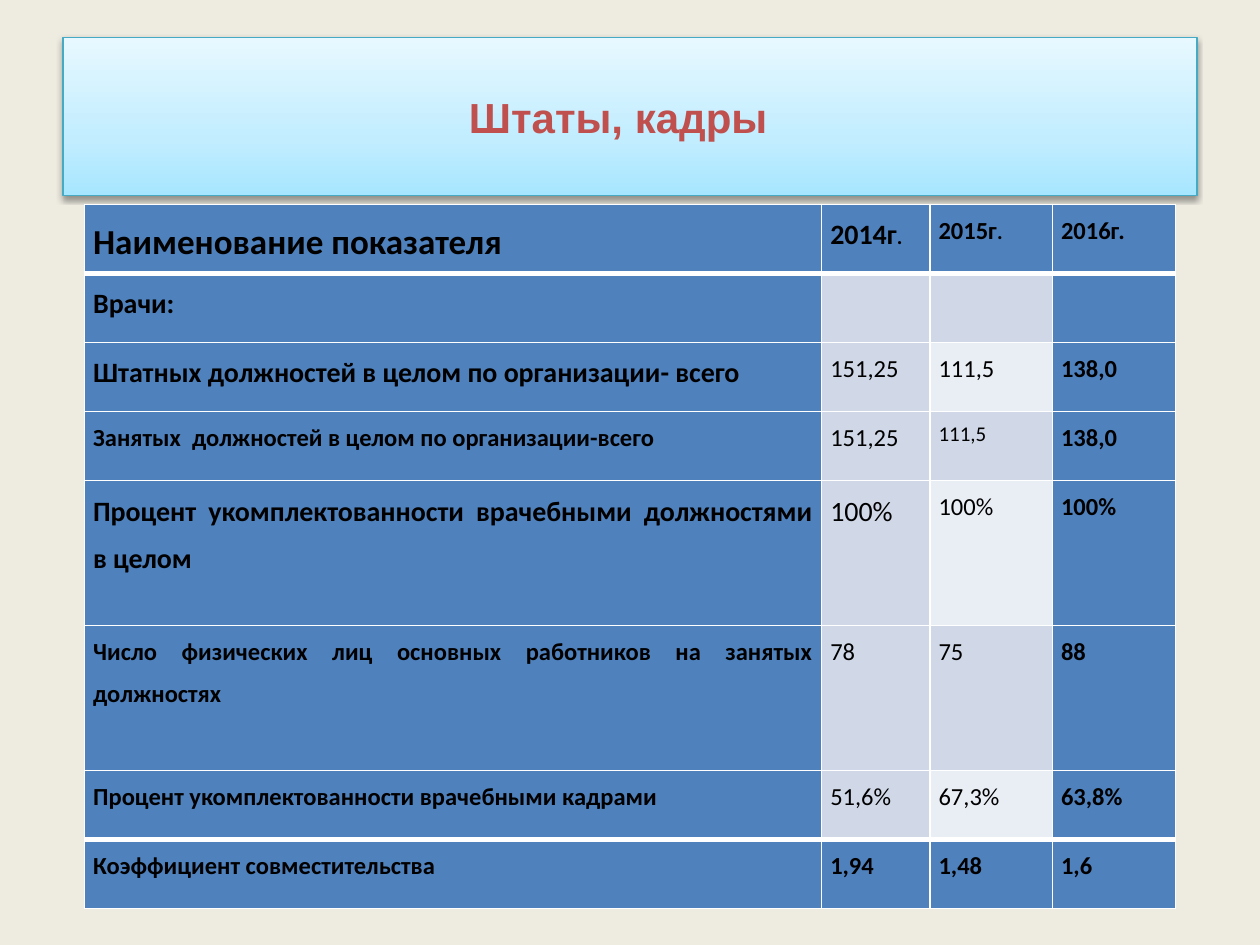
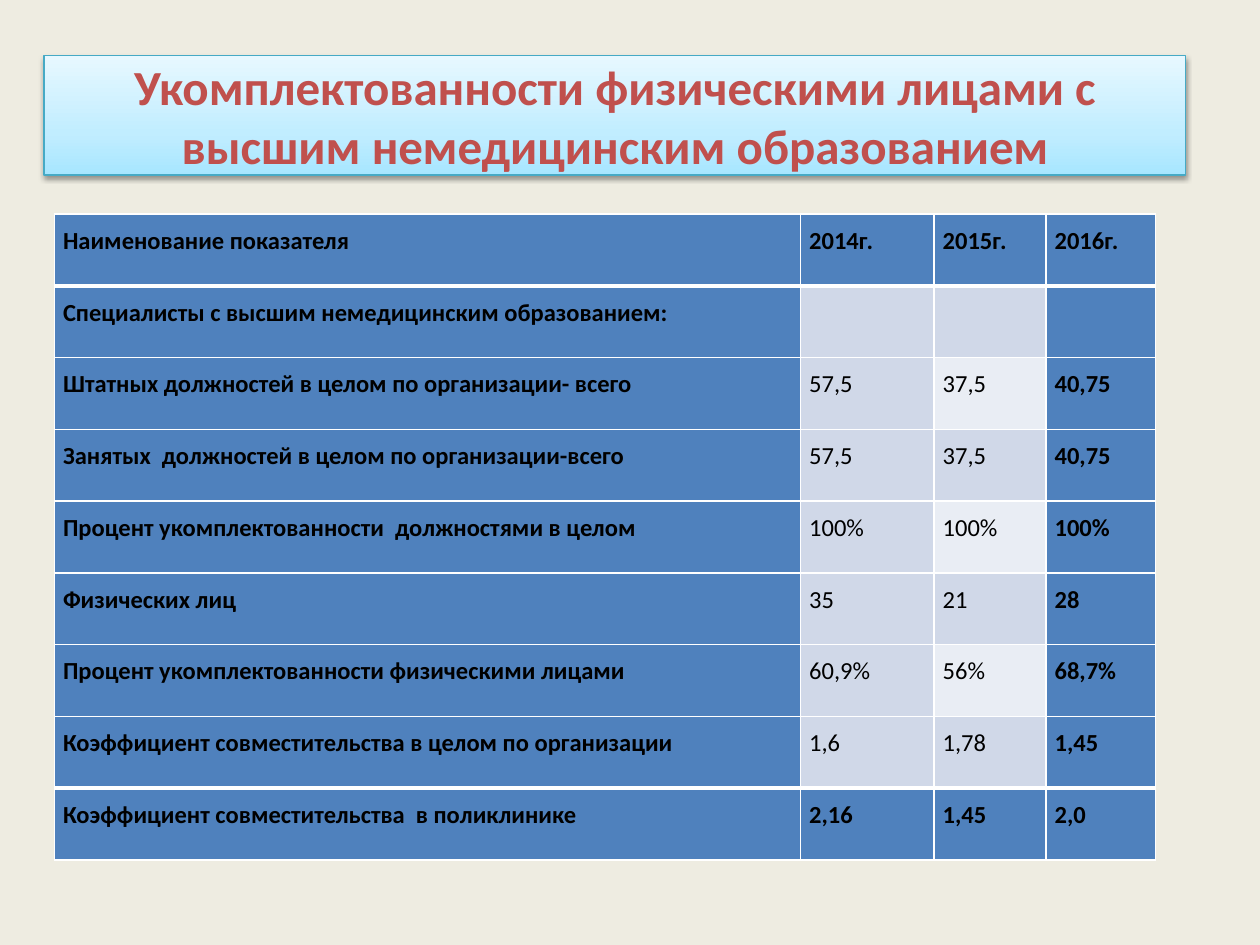
from copy import deepcopy
from pptx import Presentation
from pptx.dml.color import RGBColor
from pptx.enum.shapes import MSO_SHAPE
from pptx.enum.text import MSO_ANCHOR, PP_ALIGN
from pptx.oxml import parse_xml
from pptx.oxml.ns import nsdecls, qn
from pptx.util import Pt

RECT = MSO_SHAPE.RECTANGLE
MIDDLE = MSO_ANCHOR.MIDDLE
CENTER, JUSTIFY = PP_ALIGN.CENTER, PP_ALIGN.JUSTIFY

COLORS = {
    "bg": "EEECE1", "title": "C0504D", "title_line": "46AAC5",
    "grad_low": "A7E6FF", "grad_mid": "C1EDFF", "grad_high": "E7F8FF",
    "accent": "4F81BD", "band": "D0D8E8", "band_light": "E9EDF4",
    "text": "000000", "border": "FFFFFF", "shadow": "000000",
}
GRADIENT = [(0, "grad_low"), (0.35, "grad_mid"), (1, "grad_high")]
CELL_MARGINS = {"margin_left": Pt(5), "margin_right": Pt(5),
                "margin_top": 0, "margin_bottom": 0}
SIZE, DOT_SIZE = 14, 12
THIN, THICK = 1, 3

DOCTORS = [
    ["Наименование показателя", ("2014г", "."), ("2015г", "."), "2016г."],
    ["Врачи:", "", "", ""],
    ["Штатных должностей в целом по организации- всего", "151,25", "111,5", "138,0"],
    ["Занятых  должностей в целом по организации-всего", "151,25", "111,5", "138,0"],
    ["Процент укомплектованности врачебными должностями в целом",
     "100%", "100%", "100%"],
    ["Число физических лиц основных работников на занятых должностях",
     "78", "75", "88"],
    ["Процент укомплектованности врачебными кадрами", "51,6%", "67,3%", "63,8%"],
    ["Коэффициент совместительства", "1,94", "1,48", "1,6"],
]
DOCTOR_SIZES = {(0, 0): 20, (0, 1): 16, (1, 0): 16, (2, 0): 16,
                (3, 2): 12, (4, 0): 16, (4, 1): 16}

SPECIALISTS = [
    ["Наименование показателя", "2014г.", "2015г.", "2016г."],
    ["Специалисты с высшим немедицинским образованием:", "", "", ""],
    ["Штатных должностей в целом по организации- всего", "57,5", "37,5", "40,75"],
    ["Занятых  должностей в целом по организации-всего", "57,5", "37,5", "40,75"],
    ["Процент укомплектованности  должностями в целом", "100%", "100%", "100%"],
    ["Физических лиц", "35", "21", "28"],
    ["Процент укомплектованности физическими лицами", "60,9%", "56%", "68,7%"],
    ["Коэффициент совместительства в целом по организации", "1,6", "1,78", "1,45"],
    ["Коэффициент совместительства  в поликлинике", "2,16", "1,45", "2,0"],
]


def rgb(name):
    """Return the named colour."""
    return RGBColor.from_string(COLORS[name])


class Deck:
    """Holds the presentation, its style and the current slide."""

    def __init__(self):
        """Start a 10 by 7.5 inch presentation."""
        self.prs = Presentation()
        self.prs.slide_width, self.prs.slide_height = Pt(720), Pt(540)
        self.slide = None

    def add_slide(self):
        """Add a blank slide with the shared background."""
        self.slide = self.prs.slides.add_slide(self.prs.slide_layouts[6])
        fill = self.slide.background.fill
        fill.solid()
        fill.fore_color.rgb = rgb("bg")

    def run(self, p, text, color="text", **font):
        """Add a run with the given font values."""
        r = p.add_run()
        r.text = text
        r.font.color.rgb = rgb(color)
        for name, value in font.items():
            setattr(r.font, name, value)

    def title(self, box, text, size, font="Calibri", margin_right=7.2):
        """Draw the gradient title band."""
        sp = self.slide.shapes.add_shape(RECT, *map(Pt, box))
        sp.fill.gradient()
        sp.fill.gradient_angle = 90
        spPr = sp._element.spPr
        gs = spPr.find(".//" + qn("a:gs"))
        gs.addnext(deepcopy(gs))
        for stop, (position, color) in zip(sp.fill.gradient_stops, GRADIENT):
            stop.position = position
            stop.color.rgb = rgb(color)
        sp.line.color.rgb = rgb("title_line")
        sp.line.width = Pt(0.75)
        sp.shadow.inherit = False
        spPr.find(qn("a:effectLst")).append(parse_xml(
            f'<a:outerShdw {nsdecls("a")} blurRad="{Pt(3.1)}" dist="{Pt(1.6)}" '
            f'dir="5400000" rotWithShape="0"><a:srgbClr val="{COLORS["shadow"]}">'
            '<a:alpha val="38000"/></a:srgbClr></a:outerShdw>'))
        tf = sp.text_frame
        for name, value in {"word_wrap": True, "vertical_anchor": MIDDLE,
                            "margin_right": Pt(margin_right)}.items():
            setattr(tf, name, value)
        p = tf.paragraphs[0]
        p.alignment = CENTER
        self.run(p, text, "title", name=font, size=Pt(size), bold=True)

    def borders(self, cell, top, bottom):
        """Draw the four white borders of a cell."""
        tcPr = cell._tc.get_or_add_tcPr()
        widths = {"lnL": THIN, "lnR": THIN, "lnT": top, "lnB": bottom}
        for i, (tag, width) in enumerate(widths.items()):
            tcPr.insert(i, parse_xml(
                f'<a:{tag} {nsdecls("a")} w="{Pt(width)}"><a:solidFill>'
                f'<a:srgbClr val="{COLORS["border"]}"/></a:solidFill></a:{tag}>'))

    def cell(self, cell, value, fill, size):
        """Fill one cell; a second text part is set smaller."""
        cell.fill.solid()
        cell.fill.fore_color.rgb = rgb(fill)
        for name, margin in CELL_MARGINS.items():
            setattr(cell, name, margin)
        p = cell.text_frame.paragraphs[0]
        p.alignment, p.line_spacing = JUSTIFY, 1.4
        parts = (value,) if isinstance(value, str) else value
        for part, part_size in zip(parts, (size, DOT_SIZE)):
            if part:
                self.run(p, part, name="Calibri", size=Pt(part_size),
                         bold=fill == "accent")

    def table(self, left, top, widths, heights, rows, sizes):
        """Draw a table with accented outer rows and columns."""
        shape = self.slide.shapes.add_table(
            len(rows), len(widths),
            *map(Pt, (left, top, sum(widths), sum(heights))))
        tbl = shape.table
        for col, width in zip(tbl.columns, widths):
            col.width = Pt(width)
        for row, height in zip(tbl.rows, heights):
            row.height = Pt(height)
        last_row, last_col = len(rows) - 1, len(widths) - 1
        for i, row in enumerate(rows):
            for j, value in enumerate(row):
                if i in (0, last_row) or j in (0, last_col):
                    fill = "accent"
                else:
                    fill = "band" if j == 1 or i % 2 else "band_light"
                c = tbl.cell(i, j)
                self.cell(c, value, fill, sizes.get((i, j), SIZE))
                self.borders(c, THICK if i in (1, last_row) else THIN,
                             THICK if i in (0, last_row - 1) else THIN)


def main():
    """Build and save the two slides."""
    deck = Deck()

    deck.add_slide()
    deck.title((36, 21.6, 648, 90), "Штаты, кадры", 24, "Arial", margin_right=20.5)
    heights = [82.75 if i in (4, 5) else 39.5 for i in range(len(DOCTORS))]
    deck.table(48.25, 116.75, [421.2, 61.9, 70, 70.5], heights, DOCTORS, DOCTOR_SIZES)

    deck.add_slide()
    deck.title((25.2, 31.7, 652.3, 68.4),
               "Укомплектованности физическими лицами с высшим немедицинским образованием",
               28)
    deck.table(31, 122.4, [426.4, 76.3, 64, 62.6], [41] * len(SPECIALISTS),
               SPECIALISTS, {})

    deck.prs.save("out.pptx")


if __name__ == "__main__":
    main()
